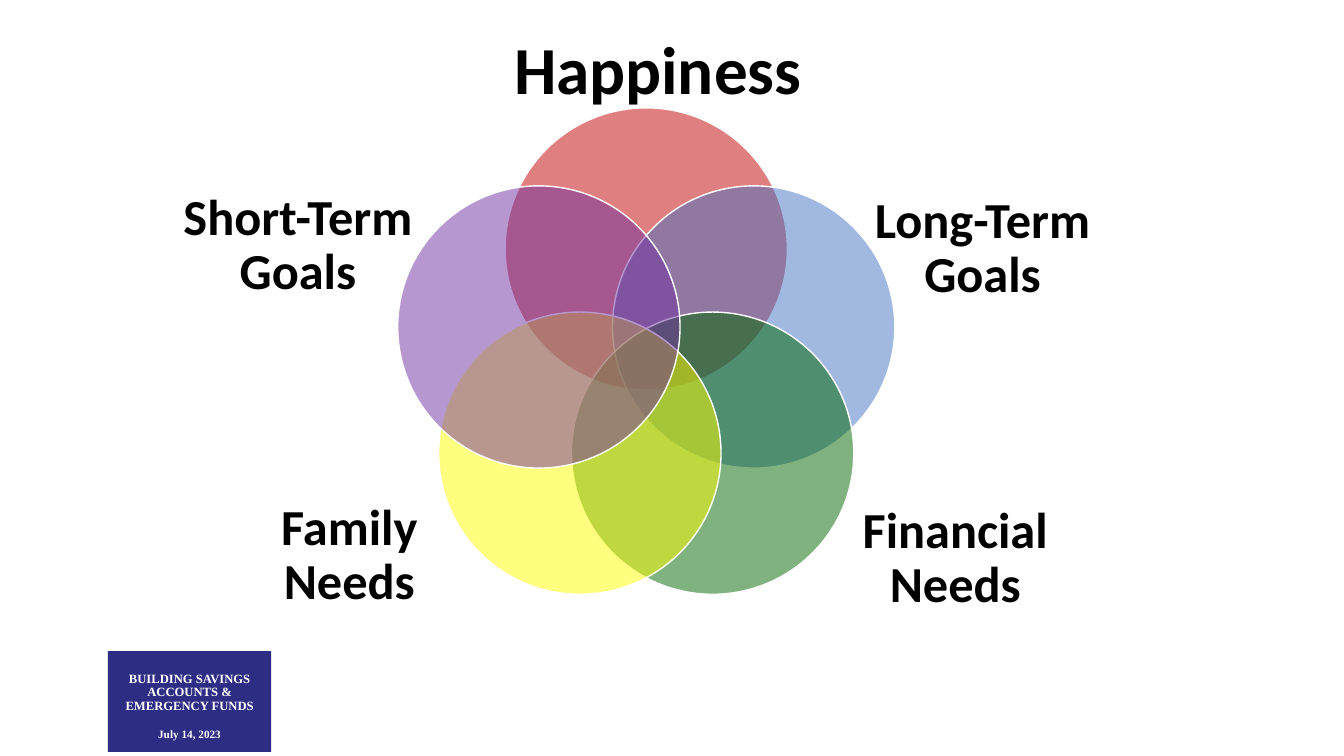
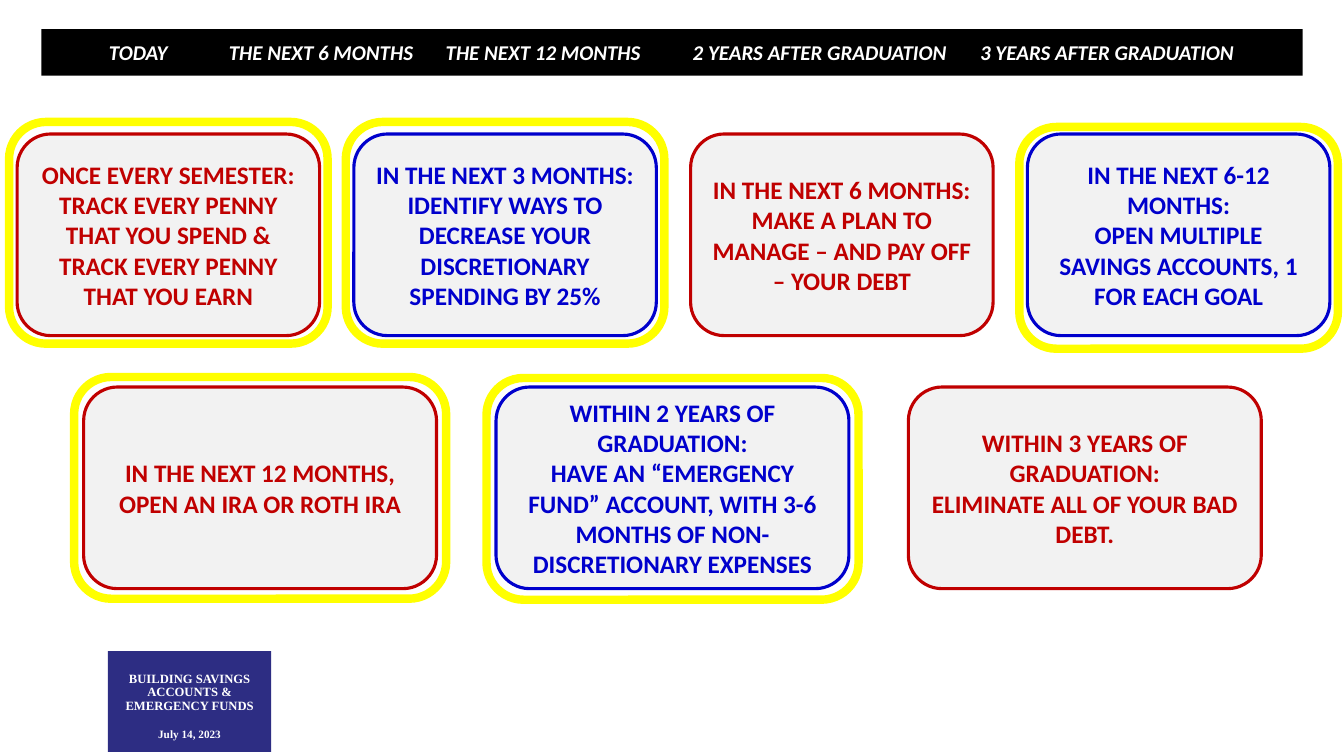
from math import cos, pi, sin

from lxml import etree
from pptx import Presentation
from pptx.dml.color import RGBColor
from pptx.enum.shapes import MSO_SHAPE
from pptx.enum.text import MSO_ANCHOR, PP_ALIGN
from pptx.oxml.ns import qn
from pptx.util import Inches, Pt

RECT, OVAL, ROUND = MSO_SHAPE.RECTANGLE, MSO_SHAPE.OVAL, MSO_SHAPE.ROUNDED_RECTANGLE
MIDDLE, CENTER, LEFT = MSO_ANCHOR.MIDDLE, PP_ALIGN.CENTER, PP_ALIGN.LEFT
NAVY, BLACK, WHITE, GRAY = "2D2D83", "000000", "FFFFFF", "F2F2F2"
RED, BLUE, YELLOW = "C00000", "0000CC", "FFFF00"
SANS, SERIF = "Calibri", "Times New Roman"


def draw(slide, kind, box, fill=None, line=None, weight=1):
    shape = slide.shapes.add_shape(kind, *[Inches(n) for n in box])
    shape.shadow.inherit = False
    if fill:
        shape.fill.solid()
        shape.fill.fore_color.rgb = RGBColor.from_string(fill)
    else:
        shape.fill.background()
    if line:
        shape.line.color.rgb = RGBColor.from_string(line)
        shape.line.width = Pt(weight)
    else:
        shape.line.fill.background()
    return shape


def write(frame, parts, color, font=SANS, space=1.0):
    frame.word_wrap = True
    frame.vertical_anchor = MIDDLE
    for i, (words, size) in enumerate(parts):
        para = frame.add_paragraph() if i else frame.paragraphs[0]
        para.alignment = CENTER
        para.line_spacing = space
        run = para.add_run()
        run.text = words
        run.font.size = Pt(size)
        run.font.name = font
        run.font.bold = True
        run.font.color.rgb = RGBColor.from_string(color)
    return frame


deck = Presentation()
deck.slide_width = Inches(13.33)
deck.slide_height = Inches(7.5)

slides = [deck.slides.add_slide(deck.slide_layouts[6]) for _ in range(2)]
for slide in slides:
    badge = draw(slide, RECT, (1.07, 6.46, 1.62, 1), NAVY)
    frame = write(badge.text_frame, [
        ("BUILDING SAVINGS ACCOUNTS & EMERGENCY FUNDS", 9),
        ("July 14, 2023", 8),
    ], WHITE, SERIF, 0.9)
    frame.margin_top = Inches(0.15)
    frame.paragraphs[1].space_before = Pt(11)
venn, plan = slides

SIZE, REACH = 2.8, 1.12
MID_X, MID_Y = 6.41, 3.59
goals = [
    ("Happiness", 48, RED, (4.9, -0.22, 3.25, 1.88)),
    ("Long-Term Goals", 36, "4472C4", (8.29, 1.45, 2.91, 2.04)),
    ("Financial Needs", 36, "006600", (8.43, 4.53, 2.09, 2.04)),
    ("Family Needs", 36, YELLOW, (2.42, 4.5, 2.09, 2.04)),
    ("Short-Term Goals", 36, "7030A0", (1.5, 1.42, 2.91, 2.04)),
]
for i, (words, size, color, box) in enumerate(goals):
    turn = 2 * pi * i / len(goals)
    left = MID_X + REACH * sin(turn) - SIZE / 2
    top = MID_Y - REACH * cos(turn) - SIZE / 2
    disc = draw(venn, OVAL, (left, top, SIZE, SIZE), color, WHITE)
    tint = disc._element.spPr.find(qn("a:solidFill")).find(qn("a:srgbClr"))
    etree.SubElement(tint, qn("a:alpha")).set("val", "50000")
    label = venn.shapes.add_textbox(*[Inches(n) for n in box])
    frame = write(label.text_frame, [(words, size)], BLACK, space=0.9)
    frame.margin_left = frame.margin_right = 0
    frame.margin_top = frame.margin_bottom = 0

times = ["TODAY", "THE NEXT 6 MONTHS", "THE NEXT 12 MONTHS",
         "2 YEARS AFTER GRADUATION", "3 YEARS AFTER GRADUATION"]
band = draw(plan, RECT, (0.41, 0.29, 12.51, 0.46), BLACK)
frame = write(band.text_frame, [("\t".join(times), 15)], WHITE)
frame.margin_left = Inches(0.67)
para = frame.paragraphs[0]
para.alignment = LEFT
para.runs[0].font.italic = True
tabs = etree.SubElement(para._p.get_or_add_pPr(), qn("a:tabLst"))
for stop in (1.19, 3.34, 5.79, 8.64):
    tab = etree.SubElement(tabs, qn("a:tab"))
    tab.set("pos", str(Inches(stop)))
    tab.set("algn", "l")

rows = [
    (0.17, 1.33, 3, 3.34, 3.16, [
        (RED, 1.21, ["ONCE EVERY SEMESTER:",
                     "TRACK EVERY PENNY THAT YOU SPEND & TRACK EVERY PENNY THAT YOU EARN"]),
        (BLUE, 1.21, ["IN THE NEXT 3 MONTHS:",
                      "IDENTIFY WAYS TO DECREASE YOUR DISCRETIONARY SPENDING BY 25%"]),
        (RED, None, ["IN THE NEXT 6 MONTHS:",
                     "MAKE A PLAN TO MANAGE – AND PAY OFF – YOUR DEBT"]),
        (BLUE, 1.26, ["IN THE NEXT 6-12 MONTHS:",
                      "OPEN MULTIPLE SAVINGS ACCOUNTS, 1 FOR EACH GOAL"]),
    ]),
    (0.83, 3.84, 3.5, 4.09, 3.69, [
        (RED, 3.74, ["IN THE NEXT 12 MONTHS, OPEN AN IRA OR ROTH IRA"]),
        (BLUE, 3.75, ["WITHIN 2 YEARS OF GRADUATION:",
                      "HAVE AN “EMERGENCY FUND” ACCOUNT, WITH 3-6 MONTHS OF "
                      "NON-DISCRETIONARY EXPENSES"]),
        (RED, None, ["WITHIN 3 YEARS OF GRADUATION:",
                     "ELIMINATE ALL OF YOUR BAD DEBT."]),
    ]),
]
for start, top, width, pitch, wide, cards in rows:
    for i, (color, rise, lines) in enumerate(cards):
        left = start + i * pitch
        card = draw(plan, ROUND, (left, top, width, 2), GRAY, color, 2.25)
        write(card.text_frame, [(line, 18) for line in lines], color)
        if rise:
            edge = left - (wide - width) / 2
            draw(plan, ROUND, (edge, rise, wide, 2.2), line=YELLOW, weight=6)

deck.save("out.pptx")
